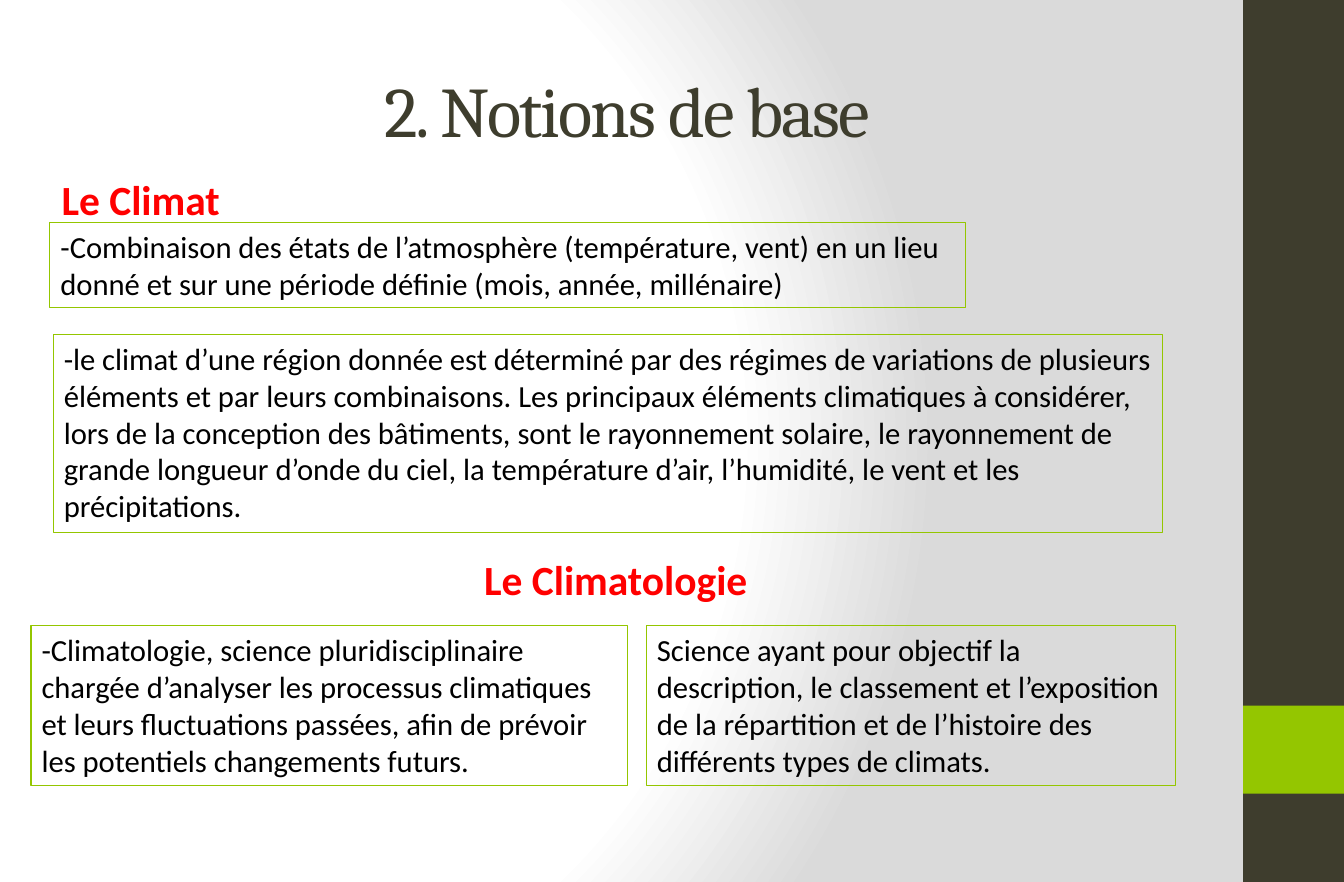
from lxml.etree import SubElement
from pptx import Presentation
from pptx.dml.color import RGBColor
from pptx.enum.shapes import MSO_SHAPE
from pptx.enum.text import MSO_ANCHOR, MSO_AUTO_SIZE, PP_ALIGN
from pptx.oxml.ns import qn
from pptx.util import Cm, Pt

COLORS = {
    "dark": "3E3D2D", "green": "94C600", "red": "FF0000",
    "black": "000000", "white": "FFFFFF", "grey": "DADADA",
}
WIDTH, HEIGHT = 32, 21
BAR_W = 2.4
TITLE = "2. Notions de base"
TITLE_BOX = (1.6, 0.84, 26.67, 3.51)
HEADINGS = [
    ("Le Climat", (1.22, 4.01, 4.55, 1.45)),
    ("Le Climatologie", (11.28, 13.06, 7.32, 1.45)),
]
DEFINITIONS = [
    ("-Combinaison des états de l’atmosphère (température, vent) en un lieu "
     "donné et sur une période définie (mois, année, millénaire)",
     (1.19, 5.3, 21.79, 2.03)),
    ("-le climat d’une région donnée est déterminé par des régimes de variations de "
     "plusieurs éléments et par leurs combinaisons. Les principaux éléments climatiques à "
     "considérer, lors de la conception des bâtiments, sont le rayonnement solaire, le "
     "rayonnement de grande longueur d’onde du ciel, la température d’air, l’humidité, le "
     "vent et les précipitations.",
     (1.27, 7.97, 26.4, 4.7)),
    ("-Climatologie, science pluridisciplinaire chargée d’analyser les processus climatiques "
     "et leurs fluctuations passées, afin de prévoir les potentiels changements futurs.",
     (0.74, 14.9, 14.2, 3.81)),
    ("Science ayant pour objectif la description, le classement et l’exposition "
     "de la répartition et de l’histoire des différents types de climats.",
     (15.39, 14.9, 12.6, 3.81)),
]
BG_STOPS = [(0, "white"), (75, "white"), (100, "grey")]
BG_FOCUS = {"l": 20, "t": 50, "r": 100, "b": 50}


def rgb(name):
    return RGBColor.from_string(COLORS[name])


def cm(box):
    return [Cm(v) for v in box]


def set_background(s):
    fill = s.background.fill
    fill.gradient()
    grad = s.element.find(".//" + qn("a:gradFill"))
    for child in list(grad):
        grad.remove(child)
    stops = SubElement(grad, qn("a:gsLst"))
    for pos, color in BG_STOPS:
        gs = SubElement(stops, qn("a:gs"), pos=str(pos * 1000))
        SubElement(gs, qn("a:srgbClr"), val=COLORS[color])
    shade = SubElement(grad, qn("a:path"))
    shade.set("path", "circle")
    SubElement(shade, qn("a:fillToRect"), {k: str(v * 1000) for k, v in BG_FOCUS.items()})


def add_rect(s, box, fill=None, line=None):
    sp = s.shapes.add_shape(MSO_SHAPE.RECTANGLE, *cm(box))
    sp.shadow.inherit = False
    if fill:
        sp.fill.solid()
        sp.fill.fore_color.rgb = rgb(fill)
    else:
        sp.fill.background()
    if line:
        sp.line.color.rgb = rgb(line)
        sp.line.width = Pt(0.75)
    else:
        sp.line.fill.background()
    return sp


def write(sp, text, size, color, font="Calibri", bold=False, wrap=True,
          align=PP_ALIGN.LEFT, anchor=MSO_ANCHOR.TOP):
    tf = sp.text_frame
    tf.word_wrap = wrap
    tf.vertical_anchor = anchor
    p = tf.paragraphs[0]
    p.alignment = align
    r = p.add_run()
    r.text = text
    r.font.size = Pt(size)
    r.font.name = font
    r.font.bold = bold
    r.font.color.rgb = rgb(color)
    return r


def main():
    prs = Presentation()
    prs.slide_width, prs.slide_height = Cm(WIDTH), Cm(HEIGHT)
    s = prs.slides.add_slide(prs.slide_layouts[6])
    set_background(s)

    add_rect(s, (WIDTH - BAR_W, 0, BAR_W, HEIGHT), fill="dark")
    add_rect(s, (WIDTH - BAR_W, 16.8, BAR_W, 2.1), fill="green")

    title = s.shapes.add_textbox(*cm(TITLE_BOX))
    r = write(title, TITLE, 48, "dark", font="Cambria",
              align=PP_ALIGN.CENTER, anchor=MSO_ANCHOR.MIDDLE)
    r.font._element.set("spc", "-130")

    for text, box in DEFINITIONS:
        write(add_rect(s, box, line="green"), text, 20.7, "black")

    for text, box in HEADINGS:
        sp = s.shapes.add_textbox(*cm(box))
        write(sp, text, 28, "red", bold=True, wrap=False)
        sp.text_frame.auto_size = MSO_AUTO_SIZE.SHAPE_TO_FIT_TEXT

    prs.save("out.pptx")


if __name__ == "__main__":
    main()
